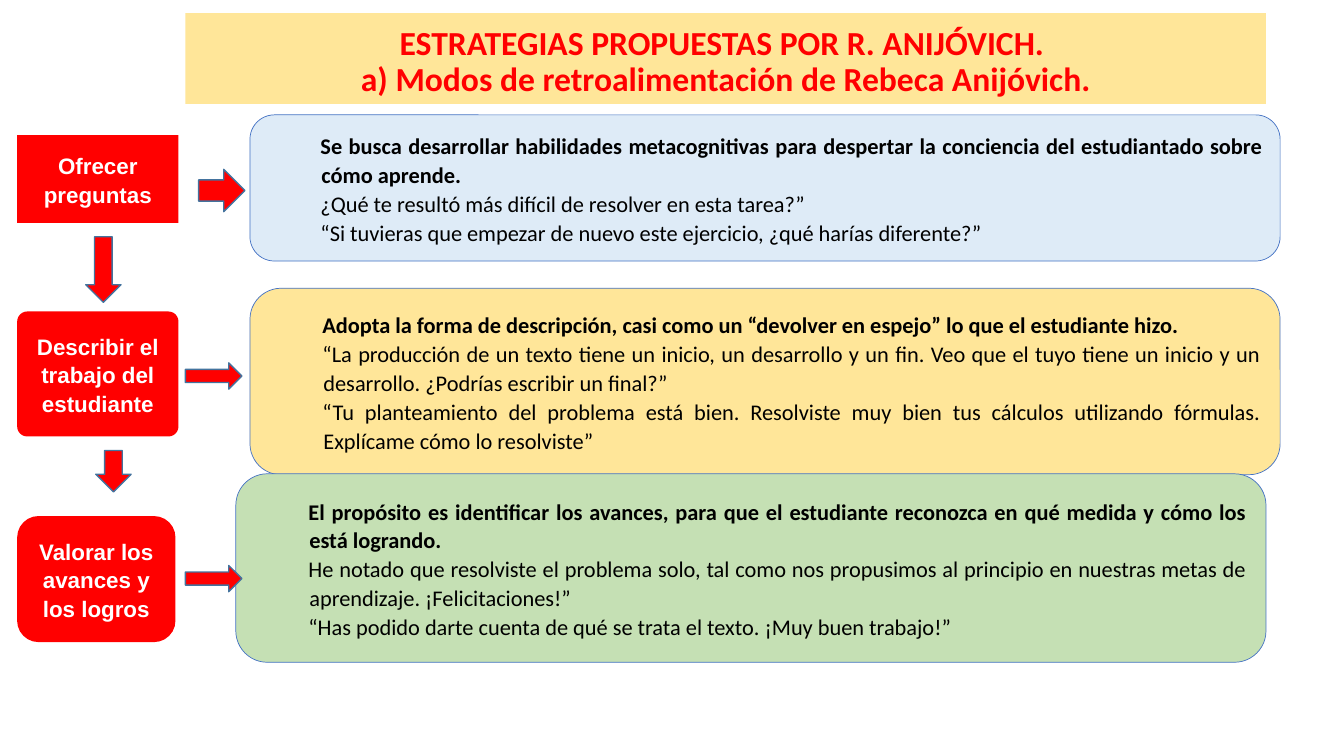
"""Build a slide on three ways of giving feedback to students."""
from pptx import Presentation
from pptx.dml.color import RGBColor
from pptx.enum.shapes import MSO_SHAPE
from pptx.enum.text import MSO_ANCHOR, MSO_AUTO_SIZE, PP_ALIGN
from pptx.util import Inches, Pt

ROUND = MSO_SHAPE.ROUNDED_RECTANGLE
RIGHT, DOWN = MSO_SHAPE.RIGHT_ARROW, MSO_SHAPE.DOWN_ARROW
MIDDLE, TOP = MSO_ANCHOR.MIDDLE, MSO_ANCHOR.TOP
CENTER, JUSTIFY = PP_ALIGN.CENTER, PP_ALIGN.JUSTIFY
RED, WHITE, BLACK, SAND = "FF0000", "FFFFFF", "000000", "FFE699"

deck = Presentation()
deck.slide_width, deck.slide_height = Inches(13.33), Inches(7.5)
slide = deck.slides.add_slide(deck.slide_layouts[5])


def dress(shape, place, fill, edge=None, width=0):
    """Place a shape by percent of the slide, then fill and outline it."""
    x, y, w, h = place
    shape.left, shape.width = [int(deck.slide_width * n / 100) for n in (x, w)]
    shape.top, shape.height = [int(deck.slide_height * n / 100) for n in (y, h)]
    shape.fill.solid()
    shape.fill.fore_color.rgb = RGBColor.from_string(fill)
    if edge:
        shape.line.color.rgb = RGBColor.from_string(edge)
        shape.line.width = Pt(width)
    else:
        shape.line.fill.background()
    return shape


def write(shape, lines, font, size, color, align, space, indent=0):
    """Write paragraphs; with an indent only the first one is bold."""
    frame = shape.text_frame
    frame.word_wrap = True
    frame.text = "\n".join(lines)
    for i, para in enumerate(frame.paragraphs):
        para.alignment, para.line_spacing = align, space
        para.space_before, para.space_after = Pt(0), Pt(0.2)
        para.font.name, para.font.size = font, Pt(size)
        para.font.bold = i == 0 or not indent
        para.font.color.rgb = RGBColor.from_string(color)
        if indent:
            props = para._p.get_or_add_pPr()
            props.set("marL", str(Inches(indent)))
            props.set("indent", str(Inches(-0.01)))
    return frame


title = dress(slide.shapes.title, (13.8, 1.73, 80.4, 12), SAND)
frame = write(title, ["ESTRATEGIAS PROPUESTAS POR R. ANIJÓVICH. ",
                      "a) Modos de retroalimentación de Rebeca Anijóvich."],
              "Calibri", 24, RED, CENTER, 0.9)
frame.auto_size, frame.vertical_anchor = MSO_AUTO_SIZE.NONE, TOP
frame.margin_left = frame.margin_right = Inches(0.13)
frame.margin_top = frame.margin_bottom = Inches(0.13)

modes = [
    ("Ofrecer preguntas", (1.28, 17.87, 12, 11.6), 0,
     (18.6, 15.2, 76.65, 19.33), "DEEBF7",
     ["Se busca desarrollar habilidades metacognitivas para despertar la "
      "conciencia del estudiantado sobre cómo aprende.",
      "¿Qué te resultó más difícil de resolver en esta tarea?”",
      "“Si tuvieras que empezar de nuevo este ejercicio, ¿qué harías diferente?”"]),
    ("Describir el trabajo del estudiante", (1.28, 41.2, 12, 16.53), 0.08,
     (18.6, 38.13, 76.65, 24.67), SAND,
     ["Adopta la forma de descripción, casi como un “devolver en espejo” lo "
      "que el estudiante hizo.",
      "“La producción de un texto tiene un inicio, un desarrollo y un fin. Veo "
      "que el tuyo tiene un inicio y un desarrollo. ¿Podrías escribir un final?”",
      "“Tu planteamiento del problema está bien. Resolviste muy bien tus "
      "cálculos utilizando fórmulas. Explícame cómo lo resolviste”"]),
    ("Valorar los avances y los logros", (1.28, 68.27, 11.78, 16.67), 0.17,
     (17.55, 62.67, 76.65, 24.93), "C5E0B4",
     ["El propósito es identificar los avances, para que el estudiante "
      "reconozca en qué medida y cómo los está logrando.",
      "He notado que resolviste el problema solo, tal como nos propusimos al "
      "principio en nuestras metas de aprendizaje. ¡Felicitaciones!”",
      "“Has podido darte cuenta de qué se trata el texto. ¡Muy buen trabajo!”"]),
]
for name, spot, bend, area, tint, lines in modes:
    label = dress(slide.shapes.add_shape(ROUND, 0, 0, 0, 0), spot, RED)
    label.adjustments[0] = bend
    panel = dress(slide.shapes.add_shape(ROUND, 0, 0, 0, 0), area, tint, "4472C4", 0.5)
    label.shadow.inherit = panel.shadow.inherit = False
    write(label, [name], "Arial", 16, WHITE, CENTER, 1.07).vertical_anchor = MIDDLE
    write(panel, lines, "Calibri", 16, BLACK, JUSTIFY, 1.07, 0.54).vertical_anchor = MIDDLE

arrows = [
    (DOWN, (6.38, 31.33, 2.63, 8.67)),
    (RIGHT, (14.78, 22.4, 3.45, 5.6)),
    (RIGHT, (13.8, 48, 4.2, 3.47)),
    (RIGHT, (13.8, 74.8, 4.2, 3.47)),
    (DOWN, (7.13, 59.6, 2.63, 5.47)),
]
for kind, spot in arrows:
    arrow = dress(slide.shapes.add_shape(kind, 0, 0, 0, 0), spot, RED, "43739E", 1)
    arrow.shadow.inherit = False

deck.save("out.pptx")
